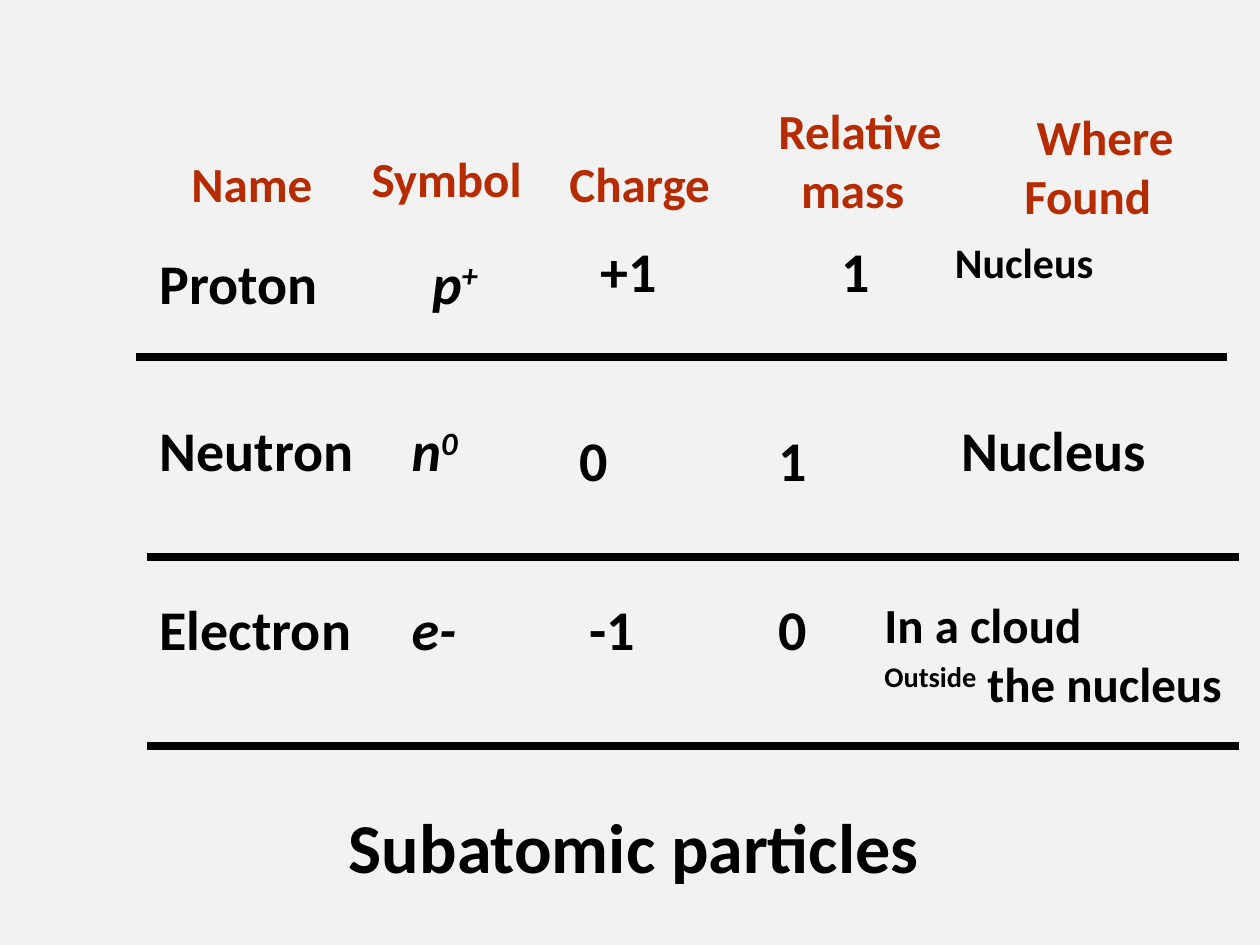
from dataclasses import dataclass

import pptx
import pptx.dml.color
import pptx.enum.shapes
import pptx.enum.text
import pptx.oxml.ns
import pptx.util
from lxml import etree

Cm = pptx.util.Cm
FONT = "Calibri"
HUES = {"back": "F2F2F2", "ink": "000000", "head": "B62B00"}


@dataclass
class Piece:
    text: str
    up: bool = False


@dataclass
class Line:
    bits: list[Piece]
    dent: float = 0


@dataclass
class Cell:
    lines: list[Line]
    left: float
    top: float
    wide: float
    high: float = 1.63
    size: int = 32
    slant: bool = False


@dataclass
class Rule:
    left: float
    top: float


def plain(text: str, dent: float = 0) -> Line:
    return Line([Piece(text)], dent)


def power(base: str, top: str) -> list[Line]:
    return [Line([Piece(base), Piece(top, up=True)])]


def rgb(name: str):
    return pptx.dml.color.RGBColor.from_string(HUES[name])


def write(frame, lines: list[Line], *, size: int, hue: str = "ink",
          slant: bool = False) -> None:
    frame.word_wrap = True
    frame.auto_size = pptx.enum.text.MSO_AUTO_SIZE.NONE
    frame.vertical_anchor = pptx.enum.text.MSO_ANCHOR.TOP
    frame.margin_right = 0
    for spot, line in enumerate(lines):
        para = frame.add_paragraph() if spot else frame.paragraphs[0]
        para.alignment = pptx.enum.text.PP_ALIGN.LEFT
        if line.dent:
            para._p.get_or_add_pPr().set("marL", str(Cm(line.dent)))
        for bit in line.bits:
            run = para.add_run()
            run.text = bit.text
            font = run.font
            font.name, font.size = FONT, pptx.util.Pt(size)
            font.bold, font.italic = True, slant
            font.color.rgb = rgb(hue)
            if bit.up:
                run._r.get_or_add_rPr().set("baseline", "30000")


def place(slide, cell: Cell, hue: str) -> None:
    box = slide.shapes.add_textbox(
        Cm(cell.left), Cm(cell.top), Cm(cell.wide), Cm(cell.high))
    write(box.text_frame, cell.lines, size=cell.size, hue=hue, slant=cell.slant)


def draw(slide, rule: Rule) -> None:
    line = slide.shapes.add_connector(
        pptx.enum.shapes.MSO_CONNECTOR.STRAIGHT,
        Cm(rule.left), Cm(rule.top), Cm(rule.left + 22), Cm(rule.top))
    line.line.color.rgb = rgb("ink")
    line.line.width = pptx.util.Pt(4.5)
    etree.SubElement(line._element.spPr, pptx.oxml.ns.qn("a:effectLst"))


HEADS = [
    Cell([plain("Name")], 3.61, 2.97, 2.97, 1.45, 28),
    Cell([plain("Symbol", 0.25)], 6.99, 2.87, 3.99, 1.45, 28),
    Cell([plain("Charge")], 11.23, 2.97, 4.29, 1.45, 28),
    Cell([plain("Relative"), plain("mass", 0.46)], 15.44, 1.9, 4.83, 2.62, 28),
    Cell([plain("Where", 0.25), plain("Found")], 20.4, 2.03, 5, 2.62, 28),
]
CELLS = [
    Cell([plain("Proton")], 2.97, 4.88, 3.73),
    Cell(power("p", "+"), 8.46, 4.88, 1.5, slant=True),
    Cell([plain("+1")], 11.86, 4.65, 1.7),
    Cell([plain("1", 2.54)], 14.17, 4.65, 5.28),
    Cell([plain("Nucleus", 0.38)], 18.62, 4.65, 5.72, 2.18, 24),
    Cell([plain("Neutron")], 2.97, 8.26, 4.47),
    Cell(power("n", "0"), 8.05, 8.26, 1.5, slant=True),
    Cell([plain("0")], 11.43, 8.46, 2.11),
    Cell([plain("1")], 15.44, 8.46, 1.07),
    Cell([plain("Nucleus", 0.51)], 18.62, 8.26, 4.78),
    Cell([plain("Electron")], 2.97, 11.86, 5.08),
    Cell([plain("e-")], 8.05, 11.86, 1.42, slant=True),
    Cell([plain("-1")], 11.63, 11.86, 1.45),
    Cell([plain("0")], 15.44, 11.86, 1.09),
    Cell([plain("In a cloud"),
          Line([Piece("Outside", up=True), Piece(" the nucleus")])],
         17.58, 11.86, 7.82, 2.64, 28),
]
RULES = [Rule(2.74, 7.19), Rule(2.97, 11.23), Rule(2.97, 15.04)]


def main() -> None:
    deck = pptx.Presentation()
    deck.slide_width, deck.slide_height = Cm(25.4), Cm(19.05)
    slide = deck.slides.add_slide(deck.slide_layouts[5])
    fill = slide.background.fill
    fill.solid()
    fill.fore_color.rgb = rgb("back")

    title = slide.shapes.title
    title.left, title.top = Cm(6.78), Cm(16.08)
    title.width, title.height = Cm(12.47), Cm(1.96)
    write(title.text_frame, [plain("Subatomic particles")], size=40)

    for hue, cells in (("head", HEADS), ("ink", CELLS)):
        for cell in cells:
            place(slide, cell, hue)
    for rule in RULES:
        draw(slide, rule)
    deck.save("out.pptx")


if __name__ == "__main__":
    main()
